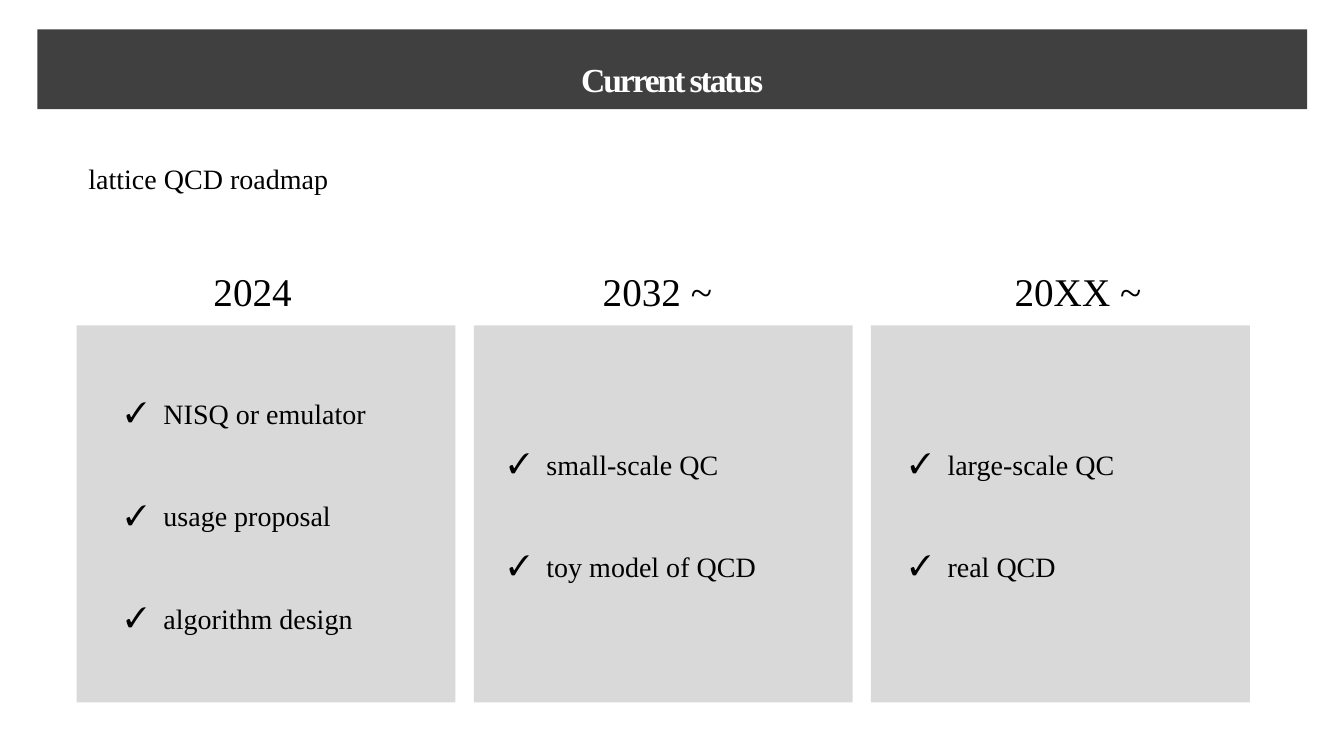
from dataclasses import dataclass

from lxml.etree import SubElement
from pptx import Presentation
from pptx.dml.color import RGBColor
from pptx.enum.shapes import MSO_SHAPE
from pptx.enum.text import MSO_ANCHOR, MSO_AUTO_SIZE, PP_ALIGN
from pptx.oxml.ns import qn
from pptx.util import Cm, Pt


@dataclass(frozen=True)
class Theme:
    font: str = "Times New Roman"
    ink: RGBColor = RGBColor(0x00, 0x00, 0x00)
    title_ink: RGBColor = RGBColor(0xFF, 0xFF, 0xFF)
    title_fill: RGBColor = RGBColor(0x40, 0x40, 0x40)
    panel_fill: RGBColor = RGBColor(0xD9, 0xD9, 0xD9)
    title_size: int = 24
    period_size: int = 28
    body_size: int = 20


THEME = Theme()

PANEL_LEFT, PANEL_TOP = 1.93, 8.2
PANEL_WIDTH, PANEL_HEIGHT = 9.55, 9.5
PANEL_PITCH = 10.01
PERIOD_TOP = 6.6
LIST_MIDDLE = 12.97
LINE_HEIGHT, ITEM_PITCH = 0.85, 2.55

# period, its left edge, left edge of the list, list items
STAGES = [
    ("2024", 5.13, 2.92, ["NISQ or emulator", "usage proposal", "algorithm design"]),
    ("2032 ~", 14.94, 12.57, ["small-scale QC", "toy model of QCD"]),
    ("20XX ~", 25.32, 22.68, ["large-scale QC", "real QCD"]),
]


def write(para, text, size=THEME.body_size, color=THEME.ink, bold=False, tracking=None):
    """Add a formatted run; tracking is in hundredths of a point."""
    span = para.add_run()
    span.text = text
    font = span.font
    font.name, font.size, font.bold = THEME.font, Pt(size), bold
    font.color.rgb = color
    if tracking is not None:
        font._element.set("spc", str(tracking))


def add_check_mark(para):
    properties = para._p.get_or_add_pPr()
    properties.set("marL", str(Cm(0.95)))
    properties.set("indent", str(Cm(-0.95)))
    SubElement(properties, qn("a:buFont"), typeface=THEME.font)
    SubElement(properties, qn("a:buChar"), char="✓")


def add_text_box(page, left, top, width, height):
    box = page.shapes.add_textbox(Cm(left), Cm(top), Cm(width), Cm(height))
    box.text_frame.word_wrap = True
    return box.text_frame


def add_label(page, text, left, top, width, height, **style):
    frame = add_text_box(page, left, top, width, height)
    write(frame.paragraphs[0], text, **style)


def add_check_list(page, items, left):
    height = 0.25 + LINE_HEIGHT + ITEM_PITCH * (len(items) - 1)
    frame = add_text_box(page, left, LIST_MIDDLE - height / 2, 8.26, height)
    for index, item in enumerate(items):
        para = frame.add_paragraph() if index else frame.paragraphs[0]
        if index:
            para.space_before = Pt(49)
        add_check_mark(para)
        write(para, item)


def add_panel(page, left):
    panel = page.shapes.add_shape(
        MSO_SHAPE.RECTANGLE, Cm(left), Cm(PANEL_TOP), Cm(PANEL_WIDTH), Cm(PANEL_HEIGHT)
    )
    panel.shadow.inherit = False
    panel.fill.solid()
    panel.fill.fore_color.rgb = THEME.panel_fill
    panel.line.fill.background()


def set_title(page, text):
    title = page.shapes.title
    title.left, title.top = Cm(0.94), Cm(0.74)
    title.width, title.height = Cm(32), Cm(2.01)
    title.fill.solid()
    title.fill.fore_color.rgb = THEME.title_fill
    frame = title.text_frame
    frame.auto_size = MSO_AUTO_SIZE.NONE
    frame.vertical_anchor = MSO_ANCHOR.MIDDLE
    para = frame.paragraphs[0]
    para.alignment = PP_ALIGN.CENTER
    para.line_spacing = 1.5
    write(para, text, size=THEME.title_size, color=THEME.title_ink, bold=True, tracking=-150)


def main():
    deck = Presentation()
    deck.slide_width, deck.slide_height = Cm(33.87), Cm(19.05)
    page = deck.slides.add_slide(deck.slide_layouts.get_by_name("Title Only"))
    set_title(page, "Current status")
    add_label(page, "lattice QCD roadmap", 1.98, 3.94, 9.55, 1.12)
    for index, (period, period_left, list_left, items) in enumerate(STAGES):
        add_panel(page, PANEL_LEFT + index * PANEL_PITCH)
        add_label(page, period, period_left, PERIOD_TOP, 4.19, 1.45, size=THEME.period_size)
        add_check_list(page, items, list_left)
    deck.save("out.pptx")


if __name__ == "__main__":
    main()
